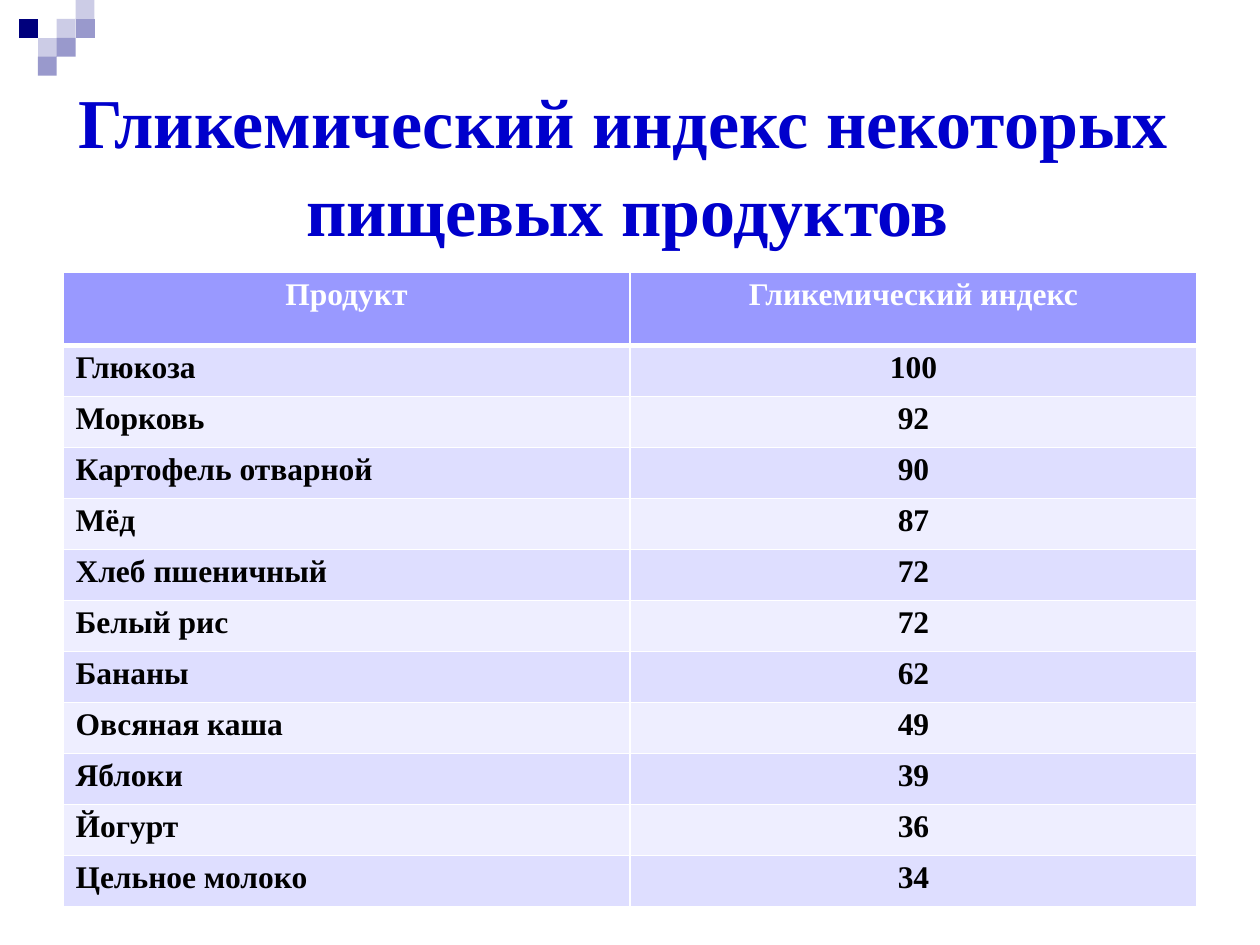
"""Build a slide with a table of the glycemic index of common foods."""
from lxml.etree import SubElement
from pptx import Presentation
from pptx.dml.color import RGBColor
from pptx.enum.text import MSO_ANCHOR, PP_ALIGN
from pptx.oxml.ns import qn
from pptx.util import Inches, Pt

COLORS = {
    "title": "0000CC", "head": "9999FF", "odd": "DEDEFF", "even": "EEEEFF",
    "white": "FFFFFF", "black": "000000",
    "pale": "CCCCE6", "mid": "9999CC", "navy": "00007C",
}
TITLE = "Гликемический индекс некоторых пищевых продуктов"
HEADS = ("Продукт", "Гликемический индекс")
FOODS = [
    ("Глюкоза", 100), ("Морковь", 92), ("Картофель отварной", 90),
    ("Мёд", 87), ("Хлеб пшеничный", 72), ("Белый рис", 72),
    ("Бананы", 62), ("Овсяная каша", 49), ("Яблоки", 39),
    ("Йогурт", 36), ("Цельное молоко", 34),
]
TILES = [
    ("pale", [(3, 1), (4, 0)]),
    ("mid", [(4, 1)]),
    ("pale", [(2, 2)]),
    ("navy", [(1, 1)]),
    ("mid", [(3, 2), (2, 3)]),
]
STEP = 0.15
HEAD_H, TABLE_H = 0.58, 5.04


def color(name):
    return RGBColor.from_string(COLORS[name])


def write(frame, text, size=18, tint="black", align=PP_ALIGN.LEFT,
          left=0, first=0, spacing=None):
    para = frame.paragraphs[0]
    props = para._p.get_or_add_pPr()
    props.set("marL", str(Inches(left)))
    props.set("indent", str(Inches(first)))
    para.alignment = align
    para.line_spacing = spacing
    run = para.add_run()
    run.text = text
    font = run.font
    font.name, font.size, font.bold = "Times New Roman", Pt(size), True
    font.color.rgb = color(tint)


def add_tiles(slide, tint, spots):
    pen = slide.shapes.build_freeform(*spots[0], scale=Inches(STEP))
    for x, y in spots:
        pen.move_to(x, y)
        pen.add_line_segments([(x + 1, y), (x + 1, y + 1), (x, y + 1)])
    shape = pen.convert_to_shape()
    shape.shadow.inherit = False
    shape.fill.solid()
    shape.fill.fore_color.rgb = color(tint)
    shape.line.fill.background()


def add_title(slide):
    box = slide.shapes.add_textbox(Inches(0.61), Inches(0.55), Inches(8.79), Inches(1.36))
    frame = box.text_frame
    frame.word_wrap = True
    frame.margin_left = frame.margin_right = frame.margin_bottom = 0
    frame.margin_top = Inches(0.04)
    write(frame, TITLE, size=40, tint="title", left=1.82, first=-1.81, spacing=1.05)


def add_borders(cell, top, bottom):
    props = cell._tc.get_or_add_tcPr()
    for side, width in (("L", 1), ("R", 1), ("T", top), ("B", bottom)):
        line = SubElement(props, qn(f"a:ln{side}"), w=str(Pt(width)))
        fill = SubElement(line, qn("a:solidFill"))
        SubElement(fill, qn("a:srgbClr"), val=COLORS["white"])


def fill_cell(cell, row, col, text):
    add_borders(cell, 3 if row == 1 else 1, 3 if row == 0 else 1)
    cell.fill.solid()
    band = "head" if row == 0 else "odd" if row % 2 else "even"
    cell.fill.fore_color.rgb = color(band)
    cell.margin_left = cell.margin_right = cell.margin_bottom = 0
    cell.margin_top = Inches(0.04)
    cell.vertical_anchor = MSO_ANCHOR.TOP
    plain = row > 0 and col == 0
    write(cell.text_frame, str(text), tint="black" if row else "white",
          align=PP_ALIGN.LEFT if plain else PP_ALIGN.CENTER, left=0.1 if plain else 0)


def add_foods(slide):
    rows = [HEADS] + FOODS
    table = slide.shapes.add_table(len(rows), len(HEADS), Inches(0.5), Inches(2.16),
                                   Inches(9), Inches(TABLE_H)).table
    for r, values in enumerate(rows):
        height = (TABLE_H - HEAD_H) / len(FOODS) if r else HEAD_H
        table.rows[r].height = Inches(height)
        for c, text in enumerate(values):
            fill_cell(table.cell(r, c), r, c, text)


def main():
    deck = Presentation()
    deck.slide_width, deck.slide_height = Inches(10), Inches(7.5)
    slide = deck.slides.add_slide(deck.slide_layouts[6])
    for tint, spots in TILES:
        add_tiles(slide, tint, spots)
    add_title(slide)
    add_foods(slide)
    deck.save("out.pptx")


if __name__ == "__main__":
    main()
